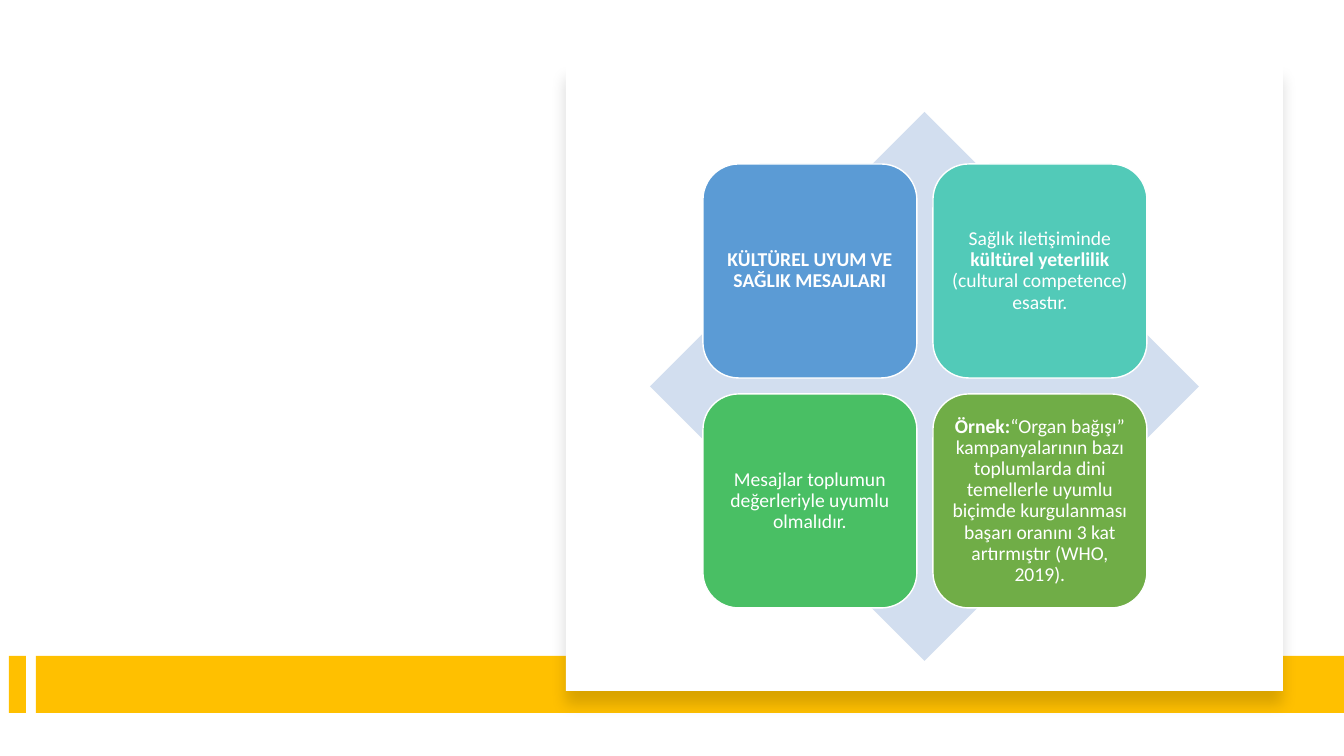
import pptx
import pptx.util
import pptx.dml.color
import pptx.enum.shapes
import pptx.enum.text
import pptx.oxml

SCALE = 914400 / 100.8
COLORS = {
    "white": "FFFFFF",
    "gold": "FFC000",
    "pale": "D2DEEF",
    "blue": "5B9BD5",
    "teal": "52CAB8",
    "green": "49BF64",
    "olive": "70AD47",
}
KINDS = pptx.enum.shapes.MSO_SHAPE


def px(length):
    return pptx.util.Emu(round(length * SCALE))


def add_box(page, left, top, width, height, fill, kind=KINDS.RECTANGLE, line=None, runs=()):
    box = page.shapes.add_shape(kind, px(left), px(top), px(width), px(height))
    box.shadow.inherit = False
    box.fill.solid()
    box.fill.fore_color.rgb = pptx.dml.color.RGBColor.from_string(COLORS[fill])
    if line:
        box.line.color.rgb = pptx.dml.color.RGBColor.from_string(COLORS[line])
        box.line.width = pptx.util.Pt(1)
    else:
        box.line.fill.background()
    if runs:
        frame = box.text_frame
        frame.word_wrap = True
        frame.vertical_anchor = pptx.enum.text.MSO_ANCHOR.MIDDLE
        frame.margin_left = frame.margin_right = px(6)
        frame.margin_top = frame.margin_bottom = px(6)
        para = frame.paragraphs[0]
        para.alignment = pptx.enum.text.PP_ALIGN.CENTER
        para.line_spacing = 0.9
        for text, bold in runs:
            span = para.add_run()
            span.text = text
            span.font.name = "Calibri"
            span.font.size = pptx.util.Pt(14)
            span.font.bold = bold
            span.font.color.rgb = pptx.dml.color.RGBColor.from_string(COLORS["white"])
    return box


deck = pptx.Presentation()
deck.slide_width = px(1344)
deck.slide_height = px(756)
page = deck.slides.add_slide(deck.slide_layouts[6])

for left, width in [(9, 17), (36, 1308)]:
    add_box(page, left, 656, width, 57, "gold")

card = add_box(page, 566, 65, 717, 626, "white")
effects = card._element.spPr.find(pptx.oxml.ns.qn("a:effectLst"))
effects.append(pptx.oxml.parse_xml(
    '<a:outerShdw xmlns:a="http://schemas.openxmlformats.org/drawingml/2006/main" '
    'blurRad="139700" dist="127000" dir="5400000" algn="t" rotWithShape="0">'
    '<a:srgbClr val="000000"><a:alpha val="15000"/></a:srgbClr></a:outerShdw>'
))

add_box(page, 650, 112, 549, 549, "pale", kind=KINDS.DIAMOND)

tiles = [
    ("blue", [("KÜLTÜREL UYUM VE SAĞLIK MESAJLARI", True)]),
    ("teal", [
        ("Sağlık iletişiminde ", False),
        ("kültürel yeterlilik", True),
        (" (cultural competence) esastır.", False),
    ]),
    ("green", [("Mesajlar toplumun değerleriyle uyumlu olmalıdır.", False)]),
    ("olive", [
        ("Örnek:", True),
        ("“Organ bağışı” kampanyalarının bazı toplumlarda dini temellerle uyumlu "
         "biçimde kurgulanması başarı oranını 3 kat artırmıştır (WHO, 2019).", False),
    ]),
]
for index, (fill, runs) in enumerate(tiles):
    row, column = divmod(index, 2)
    add_box(page, 703 + 230 * column, 164 + 230 * row, 214, 214, fill,
            kind=KINDS.ROUNDED_RECTANGLE, line="white", runs=runs)

deck.save("out.pptx")
